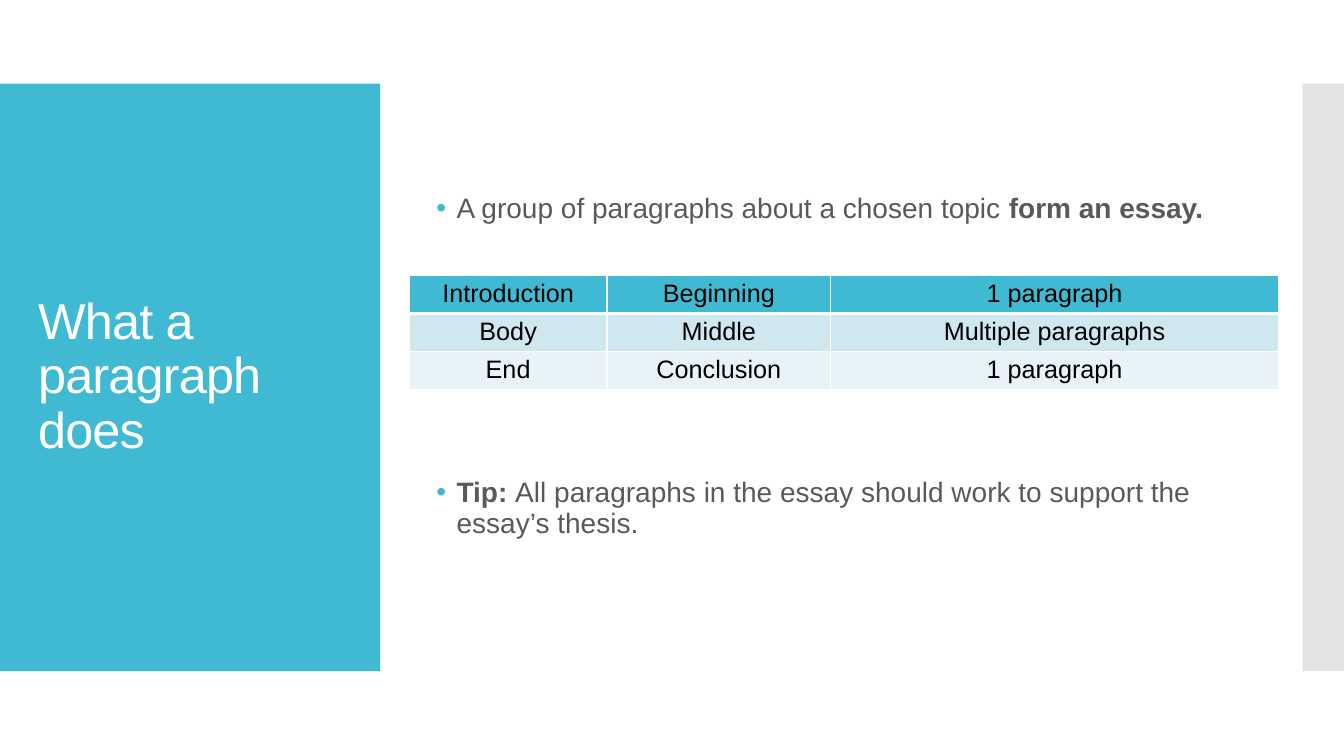
from dataclasses import dataclass

from lxml.etree import SubElement
from pptx import Presentation
from pptx.dml.color import RGBColor
from pptx.enum.shapes import MSO_SHAPE as Shape
from pptx.enum.text import MSO_ANCHOR as Anchor, PP_ALIGN as Align
from pptx.oxml.ns import qn
from pptx.util import Inches, Pt


@dataclass(frozen=True)
class Theme:
    """Colours and type sizes of the slide."""
    font: str = "Arial"
    accent: str = "40BAD2"
    side: str = "C8C8C8"
    white: str = "FFFFFF"
    body: str = "595959"
    black: str = "000000"
    rows: tuple = ("40BAD2", "CFE7EE", "E8F3F7")
    title_size: int = 36
    body_size: int = 20
    table_size: int = 18


THEME = Theme()
TITLE = "What a paragraph does"
POINTS = [
    [("A group of paragraphs about a chosen topic ", False), ("form an essay.", True)],
    [("Tip: ", True),
     ("All paragraphs in the essay should work to support the essay’s thesis.", False)],
]
ESSAY_PARTS = [
    ("Introduction", "Beginning", "1 paragraph"),
    ("Body", "Middle", "Multiple paragraphs"),
    ("End", "Conclusion", "1 paragraph"),
]


def style_run(run, size, color, bold=False):
    """Set the font, size, colour and weight of a run."""
    run.font.name = THEME.font
    run.font.size = Pt(size)
    run.font.bold = bold
    run.font.color.rgb = RGBColor.from_string(color)


def add_panel(slide, box, color):
    """Fill the box with a plain rectangle."""
    panel = slide.shapes.add_shape(Shape.RECTANGLE, *map(Inches, box))
    panel.shadow.inherit = False
    panel.fill.solid()
    panel.fill.fore_color.rgb = RGBColor.from_string(color)
    panel.line.fill.background()
    return panel


def add_text_frame(slide, box, anchor):
    """Add a wrapping text box and return its frame."""
    frame = slide.shapes.add_textbox(*map(Inches, box)).text_frame
    frame.word_wrap = True
    frame.vertical_anchor = anchor
    return frame


def add_title(slide, box):
    """Draw the title panel with its text inset in the box."""
    left, top, width, height = box
    add_panel(slide, box, THEME.accent)
    frame = add_text_frame(slide, (left + 0.28, top + 0.4, width - 0.55, height - 0.8),
                           Anchor.MIDDLE)
    frame.text = TITLE
    paragraph = frame.paragraphs[0]
    paragraph.line_spacing = 0.9
    run = paragraph.runs[0]
    style_run(run, THEME.title_size, THEME.white)
    run.font._element.set("spc", "-60")


def add_side_strip(slide, box):
    """Draw the half-transparent strip in the box."""
    strip = add_panel(slide, box, THEME.side)
    color = strip.fill._xPr.find(f"{qn('a:solidFill')}/{qn('a:srgbClr')}")
    SubElement(color, qn("a:alpha"), val="50000")


def add_bullet(paragraph):
    """Give the paragraph a hanging accent bullet."""
    properties = paragraph._p.get_or_add_pPr()
    properties.set("marL", str(Inches(0.2)))
    properties.set("indent", str(-Inches(0.2)))
    color = SubElement(properties, qn("a:buClr"))
    SubElement(color, qn("a:srgbClr"), val=THEME.accent)
    SubElement(properties, qn("a:buFont"), typeface=THEME.font)
    SubElement(properties, qn("a:buChar"), char="•")


def add_points(slide, box):
    """Write the bullets in the box, leaving room for the table between them."""
    frame = add_text_frame(slide, box, Anchor.TOP)
    for index, point in enumerate(POINTS):
        paragraph = frame.add_paragraph() if index else frame.paragraphs[0]
        paragraph.line_spacing = 0.9
        paragraph.space_before = Pt(181.5 * index)
        add_bullet(paragraph)
        for text, bold in point:
            run = paragraph.add_run()
            run.text = text
            style_run(run, THEME.body_size, THEME.body, bold)


def add_borders(cell, bottom, top):
    """Draw white cell borders with the given bottom and top widths."""
    properties = cell._tc.get_or_add_tcPr()
    for index, (side, width) in enumerate((("L", 1), ("R", 1), ("T", top), ("B", bottom))):
        line = properties.makeelement(qn(f"a:ln{side}"), {"w": str(Pt(width))})
        fill = SubElement(line, qn("a:solidFill"))
        SubElement(fill, qn("a:srgbClr"), val=THEME.white)
        properties.insert(index, line)


def add_essay_table(slide, box):
    """Lay out the essay parts as a table in the box."""
    shape = slide.shapes.add_table(len(ESSAY_PARTS), len(ESSAY_PARTS[0]), *map(Inches, box))
    table = shape.table
    for column, width in zip(table.columns, (1.96, 2.22, 4.44)):
        column.width = Inches(width)
    for row, (texts, color) in enumerate(zip(ESSAY_PARTS, THEME.rows)):
        for column, text in enumerate(texts):
            cell = table.cell(row, column)
            cell.text = text
            cell.margin_top = cell.margin_bottom = Inches(0.04)
            cell.vertical_anchor = Anchor.TOP
            cell.fill.solid()
            cell.fill.fore_color.rgb = RGBColor.from_string(color)
            add_borders(cell, bottom=3 if row == 0 else 1, top=3 if row == 1 else 1)
            paragraph = cell.text_frame.paragraphs[0]
            paragraph.alignment = Align.CENTER
            style_run(paragraph.runs[0], THEME.table_size, THEME.black)


def main():
    """Build and save the slide."""
    presentation = Presentation()
    presentation.slide_width = Inches(13.33)
    presentation.slide_height = Inches(7.5)
    slide = presentation.slides.add_slide(presentation.slide_layouts[6])
    add_title(slide, (0, 0.83, 3.77, 5.83))
    add_side_strip(slide, (12.92, 0.83, 0.41, 5.83))
    add_points(slide, (4.23, 1.88, 8, 3.6))
    add_essay_table(slide, (4.06, 2.73, 8.62, 1.13))
    presentation.save("out.pptx")


if __name__ == "__main__":
    main()
